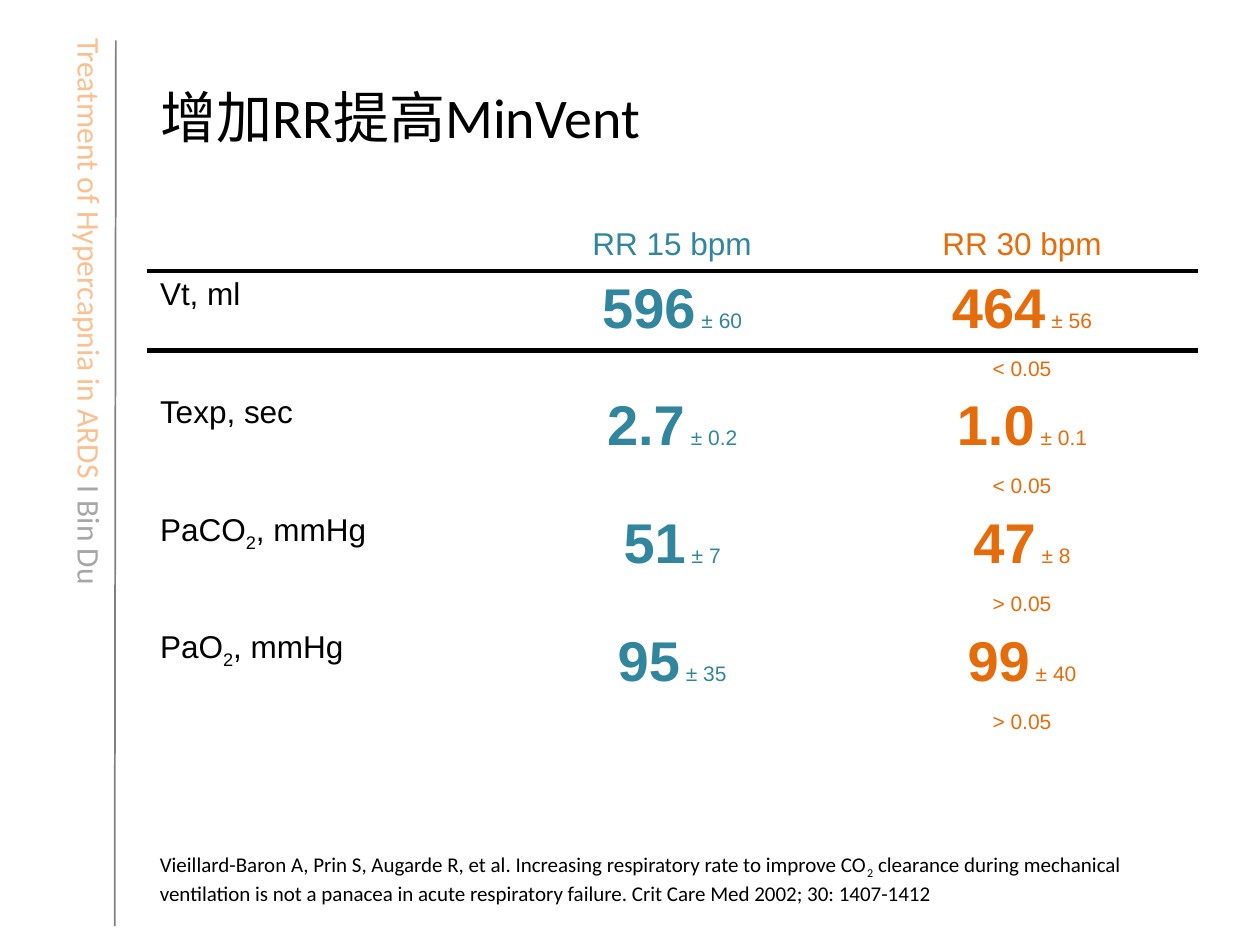
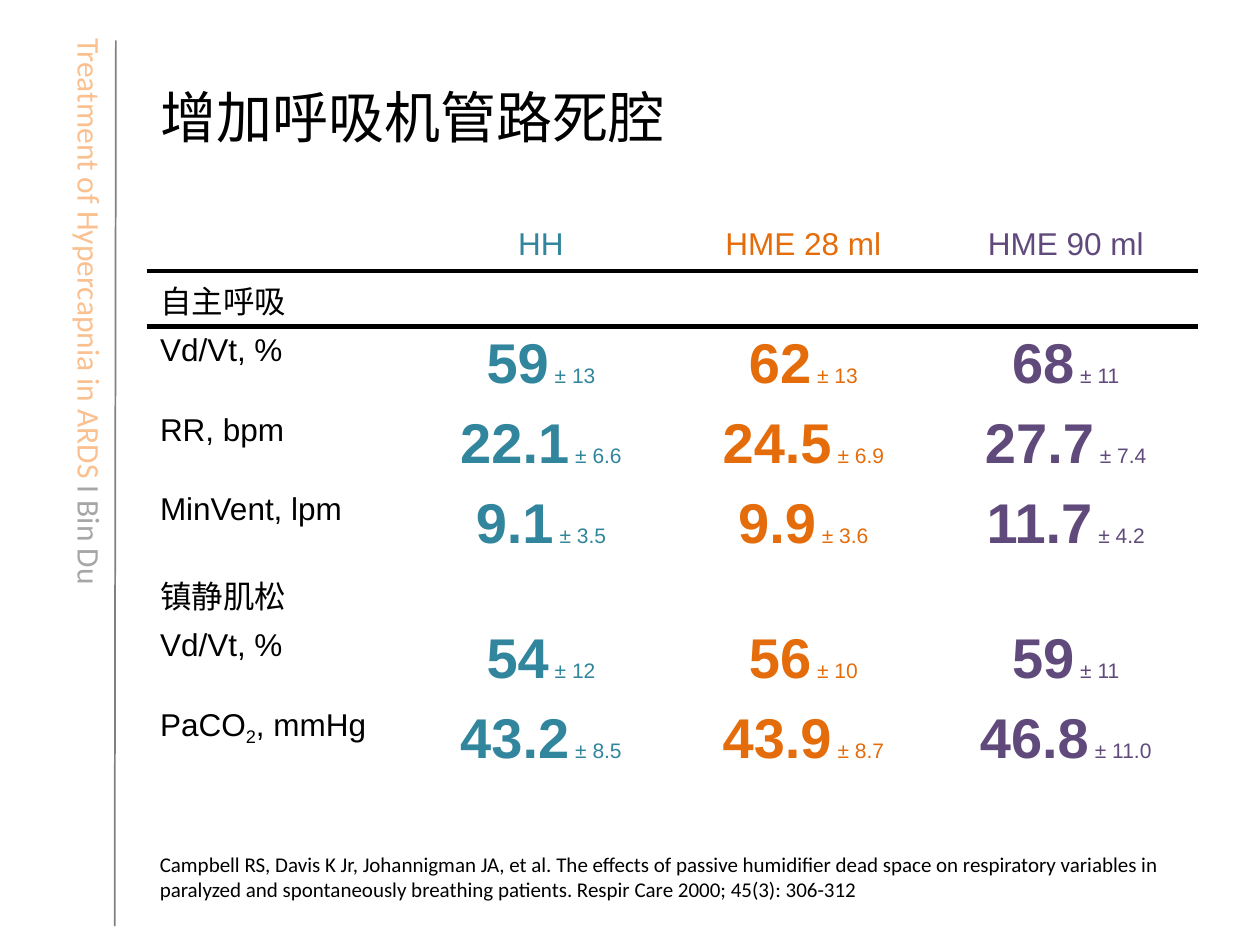
"""Build two slides of respiratory measurement tables in a shared lecture style."""
from dataclasses import dataclass
from typing import Any

from lxml.etree import SubElement
from pptx import Presentation
from pptx.dml.color import RGBColor
from pptx.enum.shapes import MSO_CONNECTOR
from pptx.enum.text import MSO_ANCHOR, MSO_AUTO_SIZE, PP_ALIGN
from pptx.oxml import parse_xml
from pptx.oxml.ns import nsdecls, qn
from pptx.util import Inches, Pt

BLACK = RGBColor(0x00, 0x00, 0x00)
GREY = RGBColor(0x80, 0x80, 0x80)
LIGHT_GREY = RGBColor(0xA6, 0xA6, 0xA6)
PEACH = RGBColor(0xFA, 0xC0, 0x90)
TEAL = RGBColor(0x31, 0x85, 0x9C)
ORANGE = RGBColor(0xE4, 0x6C, 0x0A)
PURPLE = RGBColor(0x60, 0x4A, 0x7B)
COLUMN_COLOURS = (BLACK, TEAL, ORANGE, PURPLE)

TITLE = {"name": "Calibri", "size": Pt(32)}
SIDEBAR = {"name": "Calibri", "size": Pt(18)}
CITATION = {"name": "Calibri", "size": Pt(12)}
LABEL = {"name": "Arial", "size": Pt(18)}
MEAN = {"name": "Arial", "size": Pt(32), "bold": True}
DETAIL = {"name": "Arial", "size": Pt(12), "bold": False}

CONTENT_LEFT = Inches(1.17)
CONTENT_WIDTH = Inches(8.33)
TABLE_TOP = Inches(1.75)
HEADER_HEIGHT = 0.4
MEAN_HEIGHT = 0.61
P_VALUE_HEIGHT = 0.29
GROUP_HEIGHT = 0.44
GROUPED_MEAN_HEIGHT = (4.45 - HEADER_HEIGHT - 2 * GROUP_HEIGHT) / 5


@dataclass(frozen=True)
class Row:
    """One table row: its cell texts, height in inches and plain text format."""

    cells: tuple[str, ...]
    height: float
    style: dict[str, Any]


@dataclass(frozen=True)
class TableSlide:
    """A titled table with its literature citation."""

    title: str
    header: tuple[str, ...]
    rows: tuple[Row, ...]
    citation: str


def compared(label: str, first: str, second: str, p_value: str) -> tuple[Row, Row]:
    """Return a measurement row and the p-value row below it."""
    return (Row((label, first, second), MEAN_HEIGHT, LABEL),
            Row(("", "", p_value), P_VALUE_HEIGHT, DETAIL))


def measured(*cells: str) -> Row:
    """Return a measurement row inside a group."""
    return Row(cells, GROUPED_MEAN_HEIGHT, LABEL)


def group(name: str) -> Row:
    """Return a row that names a group of measurements."""
    return Row((name, "", "", ""), GROUP_HEIGHT, LABEL)


SLIDES = (
    TableSlide(
        "增加RR提高MinVent",
        ("", "RR 15 bpm", "RR 30 bpm"),
        (
            *compared("Vt, ml", "596 ± 60", "464 ± 56", "< 0.05"),
            *compared("Texp, sec", "2.7 ± 0.2", "1.0 ± 0.1", "< 0.05"),
            *compared("PaCO|2|, mmHg", "51 ± 7", "47 ± 8", "> 0.05"),
            *compared("PaO|2|, mmHg", "95 ± 35", "99 ± 40", "> 0.05"),
        ),
        "Vieillard-Baron A, Prin S, Augarde R, et al. Increasing respiratory rate to "
        "improve CO|2| clearance during mechanical ventilation is not a panacea in acute "
        "respiratory failure. Crit Care Med 2002; 30: 1407-1412",
    ),
    TableSlide(
        "增加呼吸机管路死腔",
        ("", "HH", "HME 28 ml", "HME 90 ml"),
        (
            group("自主呼吸"),
            measured("Vd/Vt, %", "59 ± 13", "62 ± 13", "68 ± 11"),
            measured("RR, bpm", "22.1 ± 6.6", "24.5 ± 6.9", "27.7 ± 7.4"),
            measured("MinVent, lpm", "9.1 ± 3.5", "9.9 ± 3.6", "11.7 ± 4.2"),
            group("镇静肌松"),
            measured("Vd/Vt, %", "54 ± 12", "56 ± 10", "59 ± 11"),
            measured("PaCO|2|, mmHg", "43.2 ± 8.5", "43.9 ± 8.7", "46.8 ± 11.0"),
        ),
        "Campbell RS, Davis K Jr, Johannigman JA, et al. The effects of passive humidifier "
        "dead space on respiratory variables in paralyzed and spontaneously breathing "
        "patients. Respir Care 2000; 45(3): 306-312",
    ),
)


def add_text(paragraph: Any, text: str, style: dict[str, Any], colour: RGBColor = BLACK) -> None:
    """Append formatted text, with parts between bars as subscripts."""
    for index, part in enumerate(text.split("|")):
        run = paragraph.add_run()
        run.text = part
        for name, value in style.items():
            setattr(run.font, name, value)
        run.font.color.rgb = colour
        if index % 2:
            run._r.get_or_add_rPr().set("baseline", "-25000")


def add_sidebar(slide: Any) -> None:
    """Draw the vertical rule and the rotated lecture name."""
    rule = slide.shapes.add_connector(
        MSO_CONNECTOR.STRAIGHT, Inches(0.92), Inches(0.32), Inches(0.91), Inches(7.35))
    rule.line.color.rgb = GREY
    rule.line.width = Pt(1)
    SubElement(rule._element.spPr, qn("a:effectLst"))
    box = slide.shapes.add_textbox(Inches(-1.59), Inches(2.31), Inches(4.61), Inches(0.4))
    box.rotation = 90
    box.text_frame.word_wrap = False
    box.text_frame.auto_size = MSO_AUTO_SIZE.SHAPE_TO_FIT_TEXT
    paragraph = box.text_frame.paragraphs[0]
    add_text(paragraph, "Treatment of Hypercapnia in ARDS ", SIDEBAR, PEACH)
    add_text(paragraph, "Ι Bin Du", SIDEBAR, LIGHT_GREY)


def add_title(slide: Any, text: str) -> None:
    """Place and format the title placeholder."""
    title = slide.shapes.title
    title.left, title.top = CONTENT_LEFT, Inches(0.3)
    title.width, title.height = CONTENT_WIDTH, Inches(1.25)
    title.text_frame.vertical_anchor = MSO_ANCHOR.MIDDLE
    paragraph = title.text_frame.paragraphs[0]
    paragraph.alignment = PP_ALIGN.LEFT
    add_text(paragraph, text, TITLE)


def add_citation(slide: Any, text: str) -> None:
    """Add the literature reference below the table."""
    box = slide.shapes.add_textbox(CONTENT_LEFT, Inches(6.71), CONTENT_WIDTH, Inches(0.5))
    box.text_frame.word_wrap = True
    box.text_frame.auto_size = MSO_AUTO_SIZE.SHAPE_TO_FIT_TEXT
    add_text(box.text_frame.paragraphs[0], text, CITATION)


def add_border(cell: Any, side: str) -> None:
    """Draw a black three-point border on one side of a cell."""
    border = parse_xml(
        f'<a:{side} {nsdecls("a")} w="{Pt(3)}"><a:solidFill>'
        f'<a:srgbClr val="{BLACK}"/></a:solidFill></a:{side}>')
    cell._tc.get_or_add_tcPr().insert(0, border)


def fill_cell(cell: Any, text: str, style: dict[str, Any], column: int) -> None:
    """Write a label, a mean with its deviation, or an empty line of the row's size."""
    cell.fill.background()
    paragraph = cell.text_frame.paragraphs[0]
    colour = COLUMN_COLOURS[column]
    if column:
        paragraph.alignment = PP_ALIGN.CENTER
    if "±" in text:
        mean, deviation = text.split(" ", 1)
        add_text(paragraph, mean, MEAN, colour)
        add_text(paragraph, f" {deviation}", DETAIL, colour)
    elif text:
        add_text(paragraph, text, style, colour)
    else:
        SubElement(paragraph._p, qn("a:endParaRPr"), sz=str(int(style["size"].pt * 100)))


def add_measurements(slide: Any, content: TableSlide) -> None:
    """Add the table with a ruled header."""
    rows = (Row(content.header, HEADER_HEIGHT, LABEL), *content.rows)
    columns = len(content.header)
    height = Inches(sum(row.height for row in rows))
    table = slide.shapes.add_table(
        len(rows), columns, CONTENT_LEFT, TABLE_TOP, CONTENT_WIDTH, height).table
    table.first_row = table.horz_banding = False
    for row_index, row in enumerate(rows):
        table.rows[row_index].height = Inches(row.height)
        for column, text in enumerate(row.cells):
            fill_cell(table.cell(row_index, column), text, row.style, column)
    for column in range(columns):
        add_border(table.cell(0, column), "lnB")
        add_border(table.cell(1, column), "lnT")


def main() -> None:
    """Build and save the presentation."""
    presentation = Presentation()
    presentation.slide_width, presentation.slide_height = Inches(10), Inches(7.5)
    title_only = presentation.slide_layouts[5]
    for content in SLIDES:
        slide = presentation.slides.add_slide(title_only)
        add_sidebar(slide)
        add_title(slide, content.title)
        add_measurements(slide, content)
        add_citation(slide, content.citation)
    presentation.save("out.pptx")


if __name__ == "__main__":
    main()
